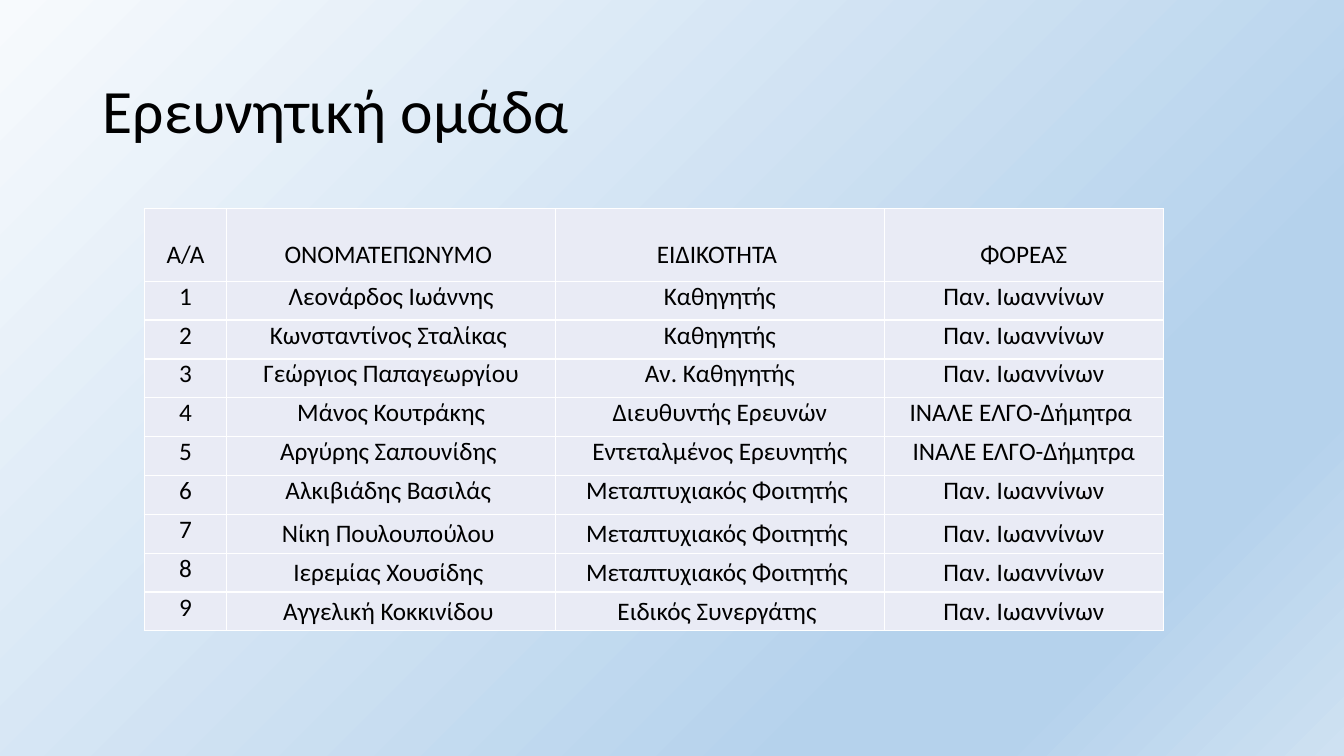
from lxml import etree
from pptx import Presentation, util as u
from pptx.dml.color import RGBColor
from pptx.enum import text
from pptx.oxml.ns import qn

WIDTH, HEIGHT = 13.33, 7.5
FONT, BLACK, WHITE, CELL_FILL = "Calibri", "000000", "FFFFFF", "E9EBF5"
GRADIENT = [(0, "F7FAFD"), (74, "B5D2EC"), (83, "B5D2EC"), (100, "CEE1F2")]
COLUMN_WIDTHS = [0.82, 3.26, 3.26, 2.77]
HEADER_HEIGHT = 0.72
FIRST_MIDDLE_ROW = 7
UNIVERSITY = "Παν. Ιωαννίνων"
STUDENT = "Μεταπτυχιακός Φοιτητής "
HEADER = ["Α/Α", "ΟΝΟΜΑΤΕΠΩΝΥΜΟ ", "ΕΙΔΙΚΟΤΗΤΑ ", "ΦΟΡΕΑΣ"]
MEMBERS = [
    ("Λεονάρδος Ιωάννης", "Καθηγητής", UNIVERSITY),
    ("Κωνσταντίνος Σταλίκας ", "Καθηγητής", UNIVERSITY),
    ("Γεώργιος Παπαγεωργίου", "Αν. Καθηγητής", UNIVERSITY),
    ("Μάνος Κουτράκης", "Διευθυντής Ερευνών", "ΙΝΑΛΕ ΕΛΓΟ-Δήμητρα "),
    ("Αργύρης Σαπουνίδης ", "Εντεταλμένος Ερευνητής", "ΙΝΑΛΕ ΕΛΓΟ-Δήμητρα"),
    ("Αλκιβιάδης Βασιλάς ", STUDENT, UNIVERSITY),
    ("Νίκη Πουλουπούλου ", STUDENT, UNIVERSITY),
    ("Ιερεμίας Χουσίδης ", STUDENT, UNIVERSITY),
    ("Αγγελική Κοκκινίδου ", "Ειδικός Συνεργάτης ", UNIVERSITY),
]


def color(value):
    """Turn a hex string into a colour."""
    return RGBColor.from_string(value)


def add_run(paragraph, words, size):
    """Append a black run of the given size."""
    run = paragraph.add_run()
    run.text = words
    run.font.name, run.font.size = FONT, u.Pt(size)
    run.font.color.rgb = color(BLACK)


def paint_background(slide):
    """Fill the background with the diagonal gradient."""
    slide.background.fill.gradient()
    gradient = slide.element.find(".//" + qn("a:gradFill"))
    stops = gradient.find(qn("a:gsLst"))
    for stop in list(stops):
        stops.remove(stop)
    for position, value in GRADIENT:
        stop = etree.SubElement(stops, qn("a:gs"), pos=str(position * 1000))
        etree.SubElement(stop, qn("a:srgbClr"), val=value)
    direction = gradient.find(qn("a:lin"))
    direction.set("ang", str(45 * 60000))
    direction.set("scaled", "1")


def add_title(slide, box, words):
    """Place the heading in its box."""
    frame = slide.shapes.add_textbox(*map(u.Inches, box)).text_frame
    frame.word_wrap = True
    frame.vertical_anchor = text.MSO_ANCHOR.MIDDLE
    paragraph = frame.paragraphs[0]
    paragraph.line_spacing = 0.9
    add_run(paragraph, words, 44)


def add_borders(cell):
    """Draw a thin white line on every side of a cell."""
    properties = cell._tc.get_or_add_tcPr()
    for index, side in enumerate(("lnL", "lnR", "lnT", "lnB")):
        line = etree.Element(qn("a:" + side), w=str(u.Pt(1)))
        fill = etree.SubElement(line, qn("a:solidFill"))
        etree.SubElement(fill, qn("a:srgbClr"), val=WHITE)
        properties.insert(index, line)


def fill_cell(cell, words, anchor, bottom):
    """Style one table cell and write its centred text."""
    cell.fill.solid()
    cell.fill.fore_color.rgb = color(CELL_FILL)
    cell.margin_left = cell.margin_right = u.Inches(0.07)
    cell.margin_top, cell.margin_bottom = 0, u.Inches(bottom)
    cell.vertical_anchor = anchor
    paragraph = cell.text_frame.paragraphs[0]
    paragraph.alignment = text.PP_ALIGN.CENTER
    add_run(paragraph, words, 18)
    add_borders(cell)


def add_team_table(slide, box):
    """Place the numbered team table in its box."""
    rows = [HEADER] + [(str(number), *member) for number, member in enumerate(MEMBERS, 1)]
    table = slide.shapes.add_table(len(rows), len(HEADER), *map(u.Inches, box)).table
    table.first_row = table.horz_banding = False
    for column, width in zip(table.columns, COLUMN_WIDTHS):
        column.width = u.Inches(width)
    member_height = (box[3] - HEADER_HEIGHT) / len(MEMBERS)
    for row_index, row in enumerate(rows):
        is_header = row_index == 0
        table.rows[row_index].height = u.Inches(HEADER_HEIGHT if is_header else member_height)
        for column_index, words in enumerate(row):
            anchor = text.MSO_ANCHOR.TOP
            if is_header:
                anchor = text.MSO_ANCHOR.BOTTOM
            elif row_index >= FIRST_MIDDLE_ROW and column_index > 0:
                anchor = text.MSO_ANCHOR.MIDDLE
            fill_cell(table.cell(row_index, column_index), words, anchor, 0.11 if is_header else 0)


def main():
    """Build and save the research team slide."""
    presentation = Presentation()
    presentation.slide_width, presentation.slide_height = u.Inches(WIDTH), u.Inches(HEIGHT)
    slide = presentation.slides.add_slide(presentation.slide_layouts[6])
    paint_background(slide)
    add_title(slide, (0.92, 0.4, 11.5, 1.45), "Ερευνητική ομάδα")
    add_team_table(slide, (1.43, 2.07, sum(COLUMN_WIDTHS), 4.19))
    presentation.save("out.pptx")


if __name__ == "__main__":
    main()
